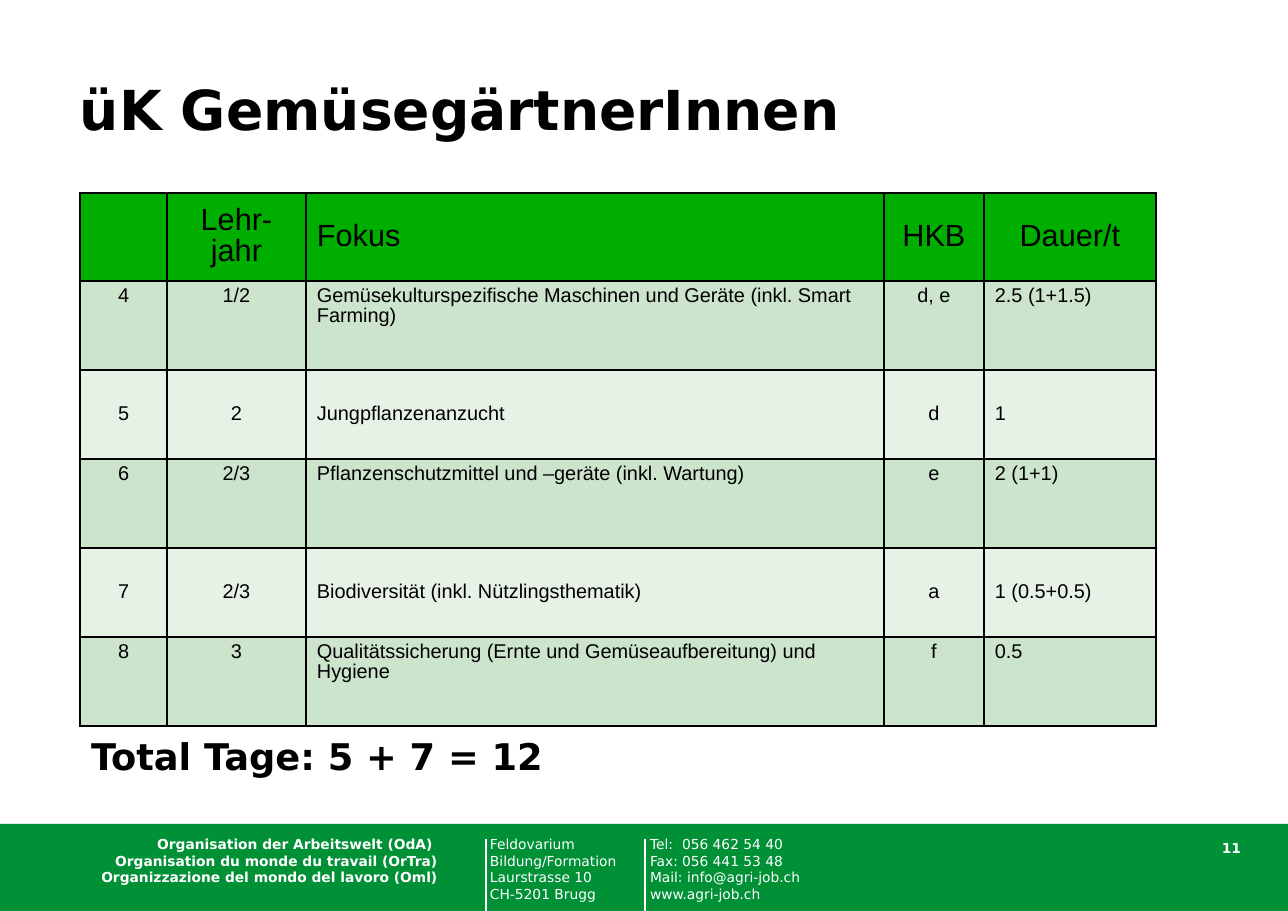
from lxml import etree
from pptx import Presentation
from pptx.dml.color import RGBColor
from pptx.enum.shapes import MSO_CONNECTOR, MSO_SHAPE
from pptx.enum.text import MSO_ANCHOR, PP_ALIGN
from pptx.oxml import parse_xml
from pptx.oxml.ns import nsdecls, qn
from pptx.util import Pt

PX = 8298  # EMU per px
LEFT, CENTER, RIGHT = PP_ALIGN.LEFT, PP_ALIGN.CENTER, PP_ALIGN.RIGHT
TOP, MIDDLE = MSO_ANCHOR.TOP, MSO_ANCHOR.MIDDLE
RECT, STRAIGHT = MSO_SHAPE.RECTANGLE, MSO_CONNECTOR.STRAIGHT
FONT, TABLE_FONT = "DejaVu Sans", "Arial"
COLORS = {
    "text": "000000", "white": "FFFFFF", "footer": "009036",
    "header": "00AE00", "odd": "CCE3CC", "even": "E7F2E7",
}


def style(p, size, font=FONT, color="text", bold=False, align=LEFT, spacing=0.9):
    p.alignment, p.line_spacing = align, spacing
    for r in p.runs:
        r.font.size, r.font.name, r.font.bold = Pt(size), font, bold
        r.font.color.rgb = RGBColor.from_string(COLORS[color])


def add_text(box, text, size, margins=(0, 0), **look):
    tf = slide.shapes.add_textbox(*[v * PX for v in box]).text_frame
    tf.word_wrap = True
    tf.margin_left = tf.margin_right = margins[0] * PX
    tf.margin_top = tf.margin_bottom = margins[1] * PX
    tf.text = text
    style(tf.paragraphs[0], size, **look)
    return tf.paragraphs[0]


prs = Presentation()
prs.slide_width, prs.slide_height = 1288 * PX, 911 * PX
slide = prs.slides.add_slide(prs.slide_layouts[6])

# Footer bar and dividers
bar = slide.shapes.add_shape(RECT, 0, 824 * PX, 1288 * PX, 87 * PX)
bar.shadow.inherit = False
bar.fill.solid()
bar.fill.fore_color.rgb = RGBColor.from_string(COLORS["footer"])
bar.line.fill.background()
for x in (486, 645):
    line = slide.shapes.add_connector(STRAIGHT, x * PX, 839 * PX, x * PX, 911 * PX)
    line.line.color.rgb = RGBColor.from_string(COLORS["white"])
    line.line.width = Pt(0.75)
    etree.SubElement(line._element.spPr, qn("a:effectLst"))

# Footer texts
add_text((66, 836, 371, 50),
         "Organisation der Arbeitswelt (OdA) \v"
         "Organisation du monde du travail (OrTra)\v"
         "Organizzazione del mondo del lavoro (Oml)",
         9, color="white", bold=True, align=RIGHT, spacing=1.0)
add_text((490, 836, 145, 66),
         "Feldovarium\vBildung/Formation\vLaurstrasse 10\vCH-5201 Brugg",
         9, color="white", spacing=1.0)
p = add_text((650, 836, 180, 66),
             "Tel:\t056 462 54 40\vFax:\t056 441 53 48\v"
             "Mail: info@agri-job.ch\vwww.agri-job.ch",
             9, color="white", spacing=1.0)
p._p.get_or_add_pPr().append(parse_xml(
    f'<a:tabLst {nsdecls("a")}><a:tab pos="{32 * PX}" algn="l"/></a:tabLst>'))
add_text((1191, 836, 62, 26), "11", 9, (12, 6),
         color="white", bold=True, align=RIGHT)

# Title
add_text((80, 83, 1076, 88), "üK GemüsegärtnerInnen", 36, bold=True, spacing=Pt(38))

# Course table
rows = [
    ("", "Lehr-jahr", "Fokus", "HKB", "Dauer/t"),
    ("4", "1/2", "Gemüsekulturspezifische Maschinen und Geräte (inkl. Smart Farming)",
     "d, e", "2.5 (1+1.5)"),
    ("5", "2", "Jungpflanzenanzucht", "d", "1"),
    ("6", "2/3", "Pflanzenschutzmittel und –geräte (inkl. Wartung)", "e", "2 (1+1)"),
    ("7", "2/3", "Biodiversität (inkl. Nützlingsthematik)", "a", "1 (0.5+0.5)"),
    ("8", "3", "Qualitätssicherung (Ernte und Gemüseaufbereitung) und Hygiene",
     "f", "0.5"),
]
widths = (87, 139, 578, 100, 172)
heights = [88] + [89] * 5
table = slide.shapes.add_table(
    len(rows), len(widths), 80 * PX, 193 * PX,
    sum(widths) * PX, sum(heights) * PX).table
for col, width in zip(table.columns, widths):
    col.width = width * PX
for i, row in enumerate(rows):
    table.rows[i].height = heights[i] * PX
    fill = "header" if i == 0 else "odd" if i % 2 else "even"
    for j, text in enumerate(row):
        cell = table.cell(i, j)
        cell.text = text
        cell.vertical_anchor = TOP if fill == "odd" else MIDDLE
        left = j == 2 or (j == 4 and i > 0)
        style(cell.text_frame.paragraphs[0], 13 if i else 20, TABLE_FONT,
              align=LEFT if left else CENTER)
        # Borders come before the fill in the cell properties
        for side in ("lnL", "lnR", "lnT", "lnB"):
            cell._tc.get_or_add_tcPr().append(parse_xml(
                f'<a:{side} {nsdecls("a")} w="12700"><a:solidFill>'
                f'<a:srgbClr val="{COLORS["text"]}"/></a:solidFill></a:{side}>'))
        cell.fill.solid()
        cell.fill.fore_color.rgb = RGBColor.from_string(COLORS[fill])

# Total
add_text((80, 733, 1102, 51), "Total Tage: 5 + 7 = 12", 24, (11, 6), bold=True)

prs.save("out.pptx")
